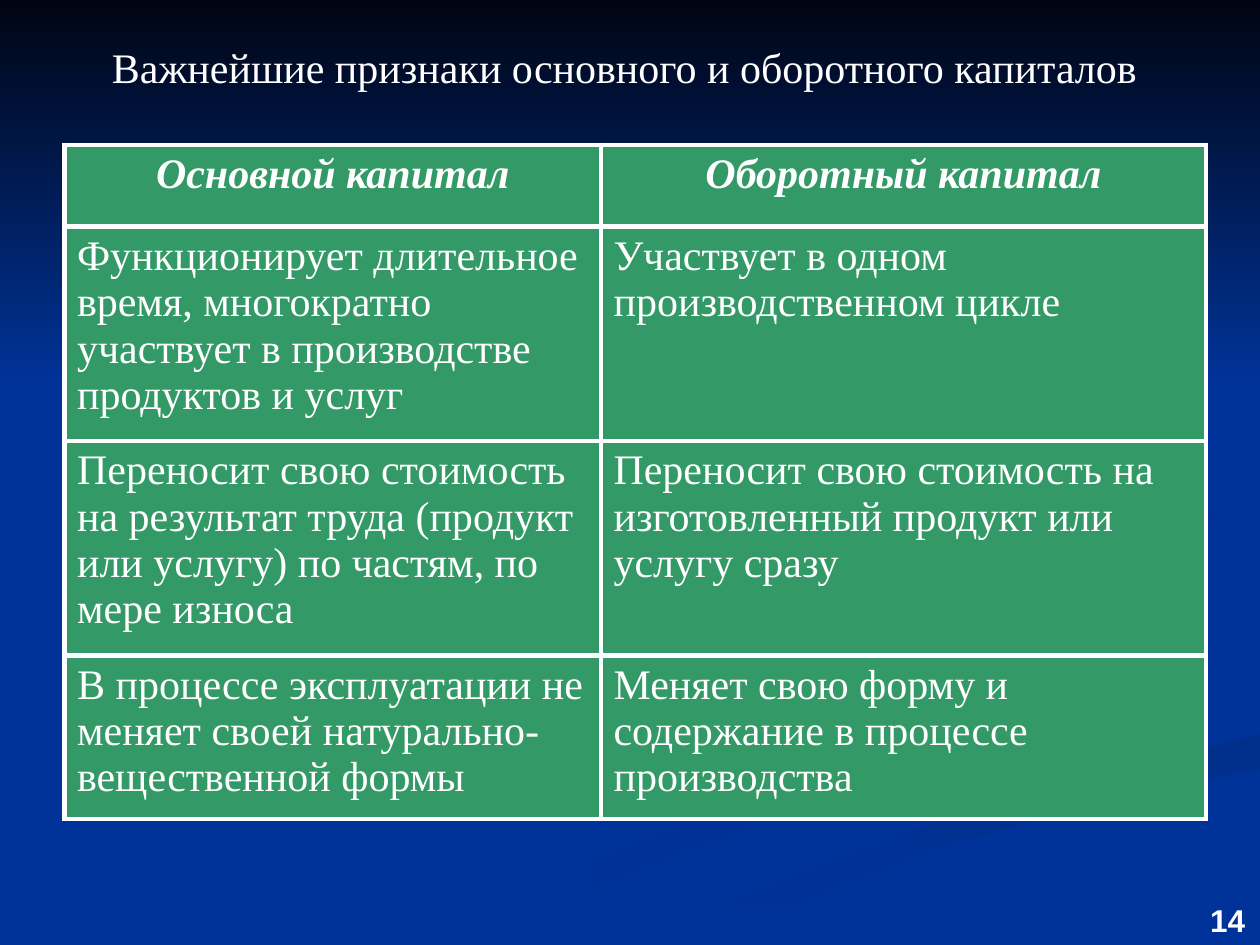
from lxml.etree import SubElement
from pptx import Presentation
from pptx.dml.color import RGBColor
from pptx.enum.shapes import MSO_SHAPE
from pptx.enum.text import MSO_ANCHOR as ANCHOR, MSO_AUTO_SIZE as AUTO_SIZE, PP_ALIGN as ALIGN
from pptx.oxml.ns import qn
from pptx.util import Cm, Pt

COLORS = {
    "blue": "003399", "night": "000514", "shade": "003193",
    "deep": "002F8C", "green": "339966", "white": "FFFFFF",
}
SERIF, SANS = "Times New Roman", "Arial"

# first colour, last colour, angle, then start, bend and end of each edge in cm
RIBBONS = [
    ("blue", "shade", 0,
     [(7.6, 19), (15.6, 15.8), (20, 14.4)], [(20.3, 14.8), (16.9, 16), (9.2, 19)]),
    ("deep", "blue", 90,
     [(12.8, 19), (18, 16.5), (25.4, 14.8)], [(25.4, 15.5), (18.9, 16.7), (14.5, 19)]),
    ("shade", "blue", 45,
     [(19.8, 11.7), (21.3, 10.6), (25.4, 10.2)], [(25.4, 10.7), (21.7, 11), (20.4, 12)]),
]

ROWS = [
    ("Основной капитал", "Оборотный капитал"),
    ("Функционирует длительное время, многократно участвует в производстве продуктов и услуг",
     "Участвует в одном производственном цикле"),
    ("Переносит свою стоимость на результат труда (продукт или услугу) по частям, по мере износа",
     "Переносит свою стоимость на изготовленный продукт или услугу сразу"),
    ("В процессе эксплуатации не меняет своей натурально-вещественной формы",
     "Меняет свою форму и содержание в процессе производства"),
]


def rgb(name):
    return RGBColor.from_string(COLORS[name])


def set_text(tf, text, size=24, font=SERIF, bold=False, italic=False, align=ALIGN.LEFT):
    tf.word_wrap = True
    p = tf.paragraphs[0]
    p.alignment = align
    r = p.add_run()
    r.text = text
    r.font.size, r.font.name = Pt(size), font
    r.font.bold, r.font.italic = bold, italic
    r.font.color.rgb = rgb("white")


def paint(sp, first, last, angle):
    """Fill with a two-colour gradient at a clockwise angle, without line or shadow."""
    sp.shadow.inherit = False
    sp.line.fill.background()
    sp.fill.gradient()
    sp.fill.gradient_angle = -angle % 360
    for stop, name in zip(sp.fill.gradient_stops, (first, last)):
        stop.color.rgb = rgb(name)


def curve(start, bend, end, steps=12):
    """Points along a quadratic Bezier curve."""
    ts = [i / steps for i in range(steps + 1)]
    return [tuple((1 - t) ** 2 * a + 2 * t * (1 - t) * b + t * t * c
                  for a, b, c in zip(start, bend, end)) for t in ts]


def add_backdrop(s, x, y, w, h):
    s.background.fill.solid()
    s.background.fill.fore_color.rgb = rgb("blue")
    for first, last, angle, upper, lower in RIBBONS:
        points = [(Cm(px), Cm(py)) for px, py in curve(*upper) + curve(*lower)]
        builder = s.shapes.build_freeform(*points[0])
        builder.add_line_segments(points[1:], close=True)
        paint(builder.convert_to_shape(x, y), first, last, angle)
    sky = s.shapes.add_shape(MSO_SHAPE.RECTANGLE, x, y, w, int(h * 0.41))
    paint(sky, "night", "blue", 90)


def add_title(s, x, y, w, h):
    sp = s.shapes.title
    sp.element.getparent().append(sp.element)  # in front of the backdrop
    sp.left, sp.top, sp.width, sp.height = x, y, w, h
    tf = sp.text_frame
    tf.auto_size = AUTO_SIZE.NONE
    tf.vertical_anchor = ANCHOR.MIDDLE
    set_text(tf, "Важнейшие признаки основного и оборотного капиталов", align=ALIGN.CENTER)


def set_borders(cell, width):
    tcPr = cell._tc.get_or_add_tcPr()
    for i, side in enumerate(("a:lnL", "a:lnR", "a:lnT", "a:lnB")):
        ln = SubElement(tcPr, qn(side), w=str(width))
        fill = SubElement(ln, qn("a:solidFill"))
        SubElement(fill, qn("a:srgbClr"), val=COLORS["white"])
        tcPr.insert(i, ln)


def add_comparison(s, x, y, w, h):
    tbl = s.shapes.add_table(len(ROWS), 2, x, y, w, h).table
    tbl.columns[0].width = int(w * 0.47)
    tbl.columns[1].width = w - tbl.columns[0].width
    for row, height in zip(tbl.rows, (1.65, 4.32, 4.32, 3.3)):
        row.height = Cm(height)
    for i, texts in enumerate(ROWS):
        head = i == 0
        for j, text in enumerate(texts):
            cell = tbl.cell(i, j)
            cell.fill.solid()
            cell.fill.fore_color.rgb = rgb("green")
            set_borders(cell, Pt(3))
            set_text(cell.text_frame, text, bold=head, italic=head,
                     align=ALIGN.CENTER if head else ALIGN.LEFT)


def add_page_number(s, x, y, w, h):
    tf = s.shapes.add_textbox(x, y, w, h).text_frame
    tf.vertical_anchor = ANCHOR.BOTTOM
    set_text(tf, "14", size=18, font=SANS, bold=True, align=ALIGN.CENTER)


def main():
    prs = Presentation()
    prs.slide_width, prs.slide_height = Cm(25.4), Cm(19.05)
    s = prs.slides.add_slide(prs.slide_layouts[5])
    add_backdrop(s, 0, 0, prs.slide_width, prs.slide_height)
    add_title(s, Cm(0.69), Cm(0.71), Cm(23.8), Cm(1.27))
    add_comparison(s, Cm(1.3), Cm(2.92), Cm(23.01), Cm(13.59))
    add_page_number(s, Cm(24.1), Cm(18.06), Cm(1.3), Cm(0.99))
    prs.save("out.pptx")


if __name__ == "__main__":
    main()
